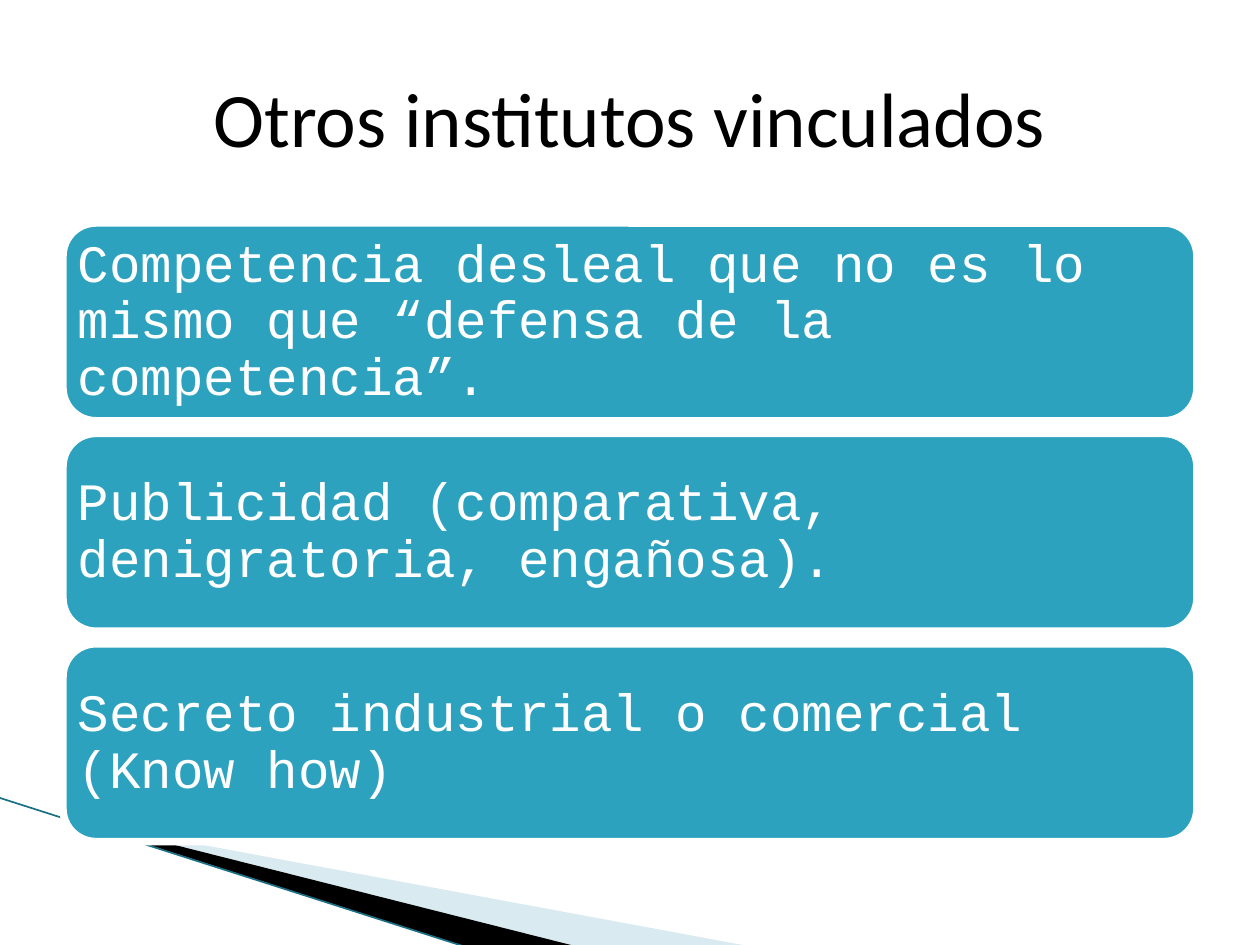
import pptx
import pptx.dml.color
import pptx.enum.shapes
import pptx.enum.text
import pptx.oxml
import pptx.oxml.ns
import pptx.util
from pptx.util import Inches

ANCHOR_MIDDLE = pptx.enum.text.MSO_ANCHOR.MIDDLE
ALIGN = pptx.enum.text.PP_ALIGN


def colour(hex_text):
    return pptx.dml.color.RGBColor.from_string(hex_text)


class SlideBuilder:
    heading = {"name": "Calibri", "size": pptx.util.Pt(44)}
    statement = {"name": "Courier New", "size": pptx.util.Pt(30)}

    def __init__(self, slide):
        self.slide = slide

    def set_text(self, shape, text, font, font_colour, align, inset, line_spacing=1.0):
        frame = shape.text_frame
        frame_format = {
            "word_wrap": True, "vertical_anchor": ANCHOR_MIDDLE,
            "margin_left": inset, "margin_right": inset,
            "margin_top": inset, "margin_bottom": inset,
        }
        for key, value in frame_format.items():
            setattr(frame, key, value)
        paragraph = frame.paragraphs[0]
        paragraph.text = text
        paragraph.alignment = align
        paragraph.line_spacing = line_spacing
        for key, value in font.items():
            setattr(paragraph.font, key, value)
        paragraph.font.color.rgb = colour(font_colour)

    def title(self, text, left, top, width, height):
        box = self.slide.shapes.add_textbox(left, top, width, height)
        self.set_text(box, text, self.heading, "000000", ALIGN.CENTER, Inches(0.1))

    def panel(self, text, left, top, width, height):
        panel = self.slide.shapes.add_shape(
            pptx.enum.shapes.MSO_SHAPE.ROUNDED_RECTANGLE, left, top, width, height)
        panel.shadow.inherit = False
        panel.fill.solid()
        panel.fill.fore_color.rgb = colour("2DA2BF")
        panel.line.color.rgb = colour("FFFFFF")
        panel.line.width = pptx.util.Pt(4.33)
        # The rounded corners already push the text in by about 0.08 inch
        self.set_text(panel, text, self.statement, "FFFFFF", ALIGN.LEFT, Inches(0.04), 0.9)

    def wedge(self, points, fill, opacity=100):
        corners = [(Inches(x), Inches(y)) for x, y in points]
        builder = self.slide.shapes.build_freeform(*corners[0])
        builder.add_line_segments(corners[1:], close=True)
        wedge = builder.convert_to_shape()
        wedge.shadow.inherit = False
        wedge.fill.solid()
        wedge.fill.fore_color.rgb = colour(fill)
        wedge.line.fill.background()
        if opacity < 100:
            tint = wedge._element.spPr.find(".//" + pptx.oxml.ns.qn("a:srgbClr"))
            alpha = pptx.oxml.parse_xml(
                f'<a:alpha {pptx.oxml.ns.nsdecls("a")} val="{opacity * 1000}"/>')
            tint.append(alpha)

    def rule(self, start, end, line_colour, width):
        rule = self.slide.shapes.add_connector(
            pptx.enum.shapes.MSO_CONNECTOR.STRAIGHT,
            *[Inches(value) for value in start + end])
        rule.line.color.rgb = colour(line_colour)
        rule.line.width = pptx.util.Pt(width)
        rule._element.spPr.append(pptx.oxml.parse_xml(
            f'<a:effectLst {pptx.oxml.ns.nsdecls("a")}/>'))


def main():
    deck = pptx.Presentation()
    deck.slide_width, deck.slide_height = Inches(10), Inches(7.5)
    builder = SlideBuilder(deck.slides.add_slide(deck.slide_layouts[6]))

    # Corner decoration
    builder.wedge([(0.55, 6.51), (5.95, 7.51), (4.56, 7.51), (0.55, 6.5)], "A0CBDC", 40)
    builder.wedge([(0.53, 6.49), (4.57, 7.51), (3.72, 7.52), (0.54, 6.5)], "000000")
    builder.rule((-0.01, 6.33), (3.71, 7.52), "1B6F85", 0.95)

    # Title
    builder.title("Otros institutos vinculados",
                  Inches(0.5), Inches(0.3), Inches(9), Inches(1.25))

    # Related legal concepts, evenly stacked
    institutes = [
        "Competencia desleal que no es lo mismo que “defensa de la competencia”.",
        "Publicidad (comparativa, denigratoria, engañosa).",
        "Secreto industrial o comercial (Know how)",
    ]
    for row, institute in enumerate(institutes):
        builder.panel(institute, Inches(0.5), Inches(1.77 + row * 1.67),
                      Inches(9), Inches(1.57))

    deck.save("out.pptx")


if __name__ == "__main__":
    main()
